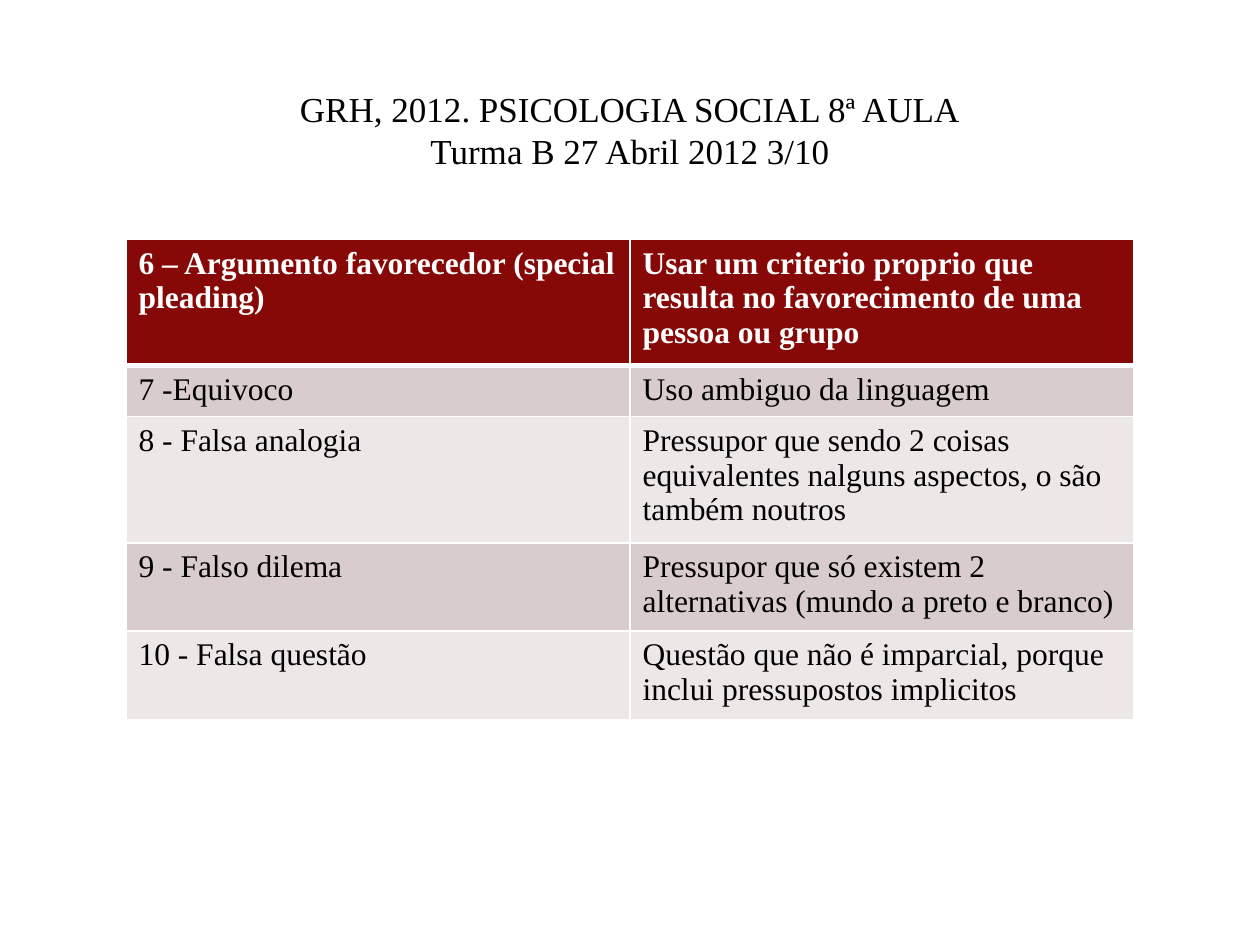
from typing import NamedTuple

from lxml.etree import SubElement
from pptx import Presentation
from pptx.dml.color import RGBColor
from pptx.enum.text import MSO_ANCHOR as Anchor, PP_ALIGN as Align
from pptx.oxml.ns import qn
from pptx.util import Cm, Pt

FONT = "Times New Roman"
WHITE, BLACK = "FFFFFF", "000000"
HEADER_RED = "860908"
BANDS = ("D9CCCC", "EDE7E7")
ROW_HEIGHT = Cm(1.03)


class Fallacy(NamedTuple):
    name: str
    meaning: str


FALLACIES = [
    Fallacy("6 – Argumento favorecedor (special pleading)",
            "Usar um criterio proprio que resulta no favorecimento de uma pessoa ou grupo"),
    Fallacy("7 -Equivoco", "Uso ambiguo da linguagem"),
    Fallacy("8 - Falsa analogia",
            "Pressupor que sendo 2 coisas equivalentes nalguns aspectos, o são também noutros"),
    Fallacy("9 - Falso dilema",
            "Pressupor que só existem 2 alternativas (mundo a preto e branco)"),
    Fallacy("10 - Falsa questão",
            "Questão que não é imparcial, porque inclui pressupostos implicitos"),
]


def rgb(value: str) -> RGBColor:
    return RGBColor.from_string(value)


def write(frame, text: str, *, size: float, color: str = BLACK,
          bold: bool = False, align=Align.LEFT) -> None:
    """Fill a text frame with one formatted paragraph; a newline breaks the line."""
    paragraph = frame.paragraphs[0]
    paragraph.text = text
    paragraph.alignment = align
    for run in paragraph.runs:
        run.font.name = FONT
        run.font.size = Pt(size)
        run.font.bold = bold
        run.font.color.rgb = rgb(color)


def add_border(cell, side: str, points: float) -> None:
    line = SubElement(cell._tc.get_or_add_tcPr(), qn(f"a:ln{side}"), w=str(Pt(points)))
    SubElement(SubElement(line, qn("a:solidFill")), qn("a:srgbClr"), val=WHITE)


def fill_cell(cell, text: str, row: int) -> None:
    is_header = row == 0
    # The rule under the header is thicker, on both cells that share it
    widths = {"L": 1, "R": 1, "T": 3 if row == 1 else 1, "B": 3 if is_header else 1}
    for side, points in widths.items():
        add_border(cell, side, points)
    cell.fill.solid()
    cell.fill.fore_color.rgb = rgb(HEADER_RED if is_header else BANDS[(row - 1) % 2])
    write(cell.text_frame, text, size=18, bold=is_header,
          color=WHITE if is_header else BLACK)


def add_fallacy_table(slide, fallacies: list[Fallacy]) -> None:
    graphic = slide.shapes.add_table(len(fallacies), 2, Cm(2.54), Cm(4.83),
                                     Cm(20.32), ROW_HEIGHT * len(fallacies))
    for row, fallacy in enumerate(fallacies):
        for column, text in enumerate(fallacy):
            fill_cell(graphic.table.cell(row, column), text, row)
    # The rows grow with their text
    graphic.height = Cm(9.68)


def main() -> None:
    deck = Presentation()
    deck.slide_width, deck.slide_height = Cm(25.4), Cm(19.05)
    slide = deck.slides.add_slide(deck.slide_layouts[6])

    # Title
    title = slide.shapes.add_textbox(Cm(2.54), Cm(1.4), Cm(20.32), Cm(2.41)).text_frame
    title.word_wrap = True
    title.vertical_anchor = Anchor.MIDDLE
    write(title, "GRH, 2012. PSICOLOGIA SOCIAL 8ª AULA\nTurma B 27 Abril 2012 3/10",
          size=20, align=Align.CENTER)

    # Fallacies and their meanings
    add_fallacy_table(slide, FALLACIES)

    deck.save("out.pptx")


if __name__ == "__main__":
    main()
